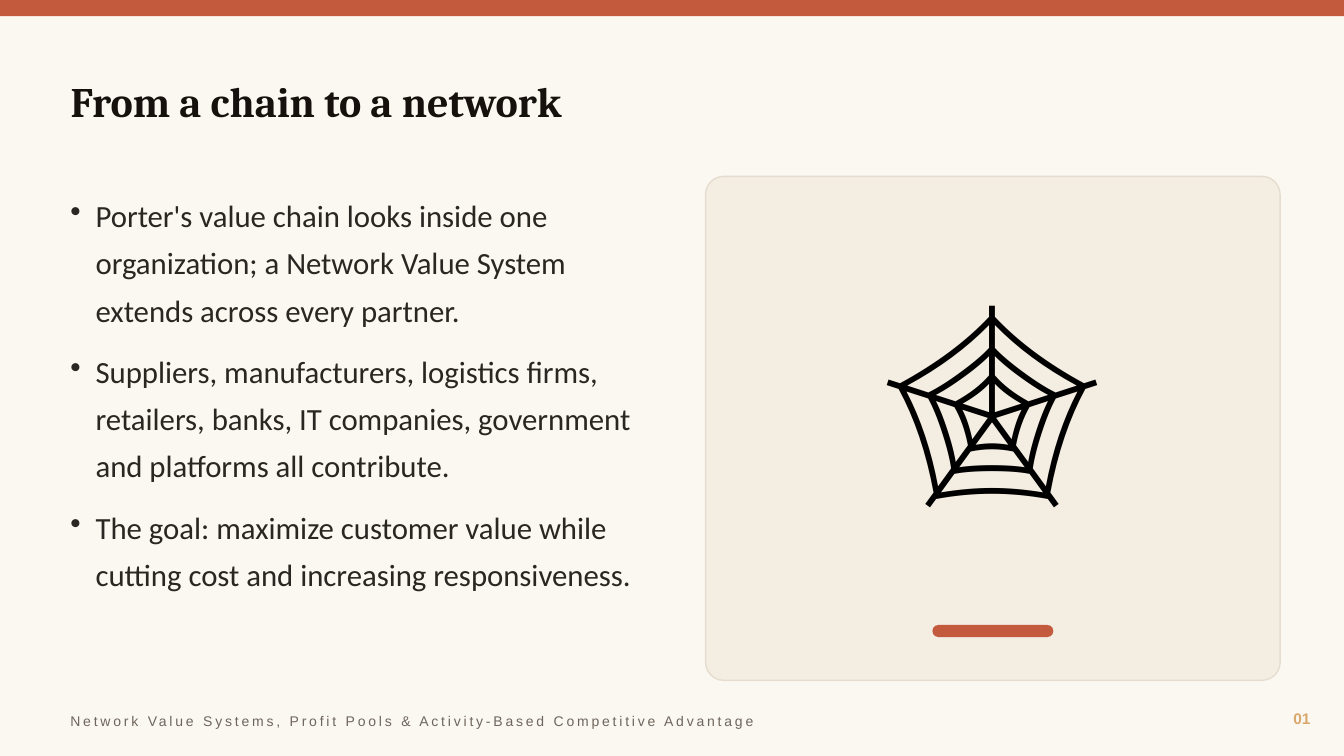
"""Build the slide on moving from a value chain to a value network."""
from dataclasses import dataclass

from lxml import etree
from pptx import Presentation
from pptx import util as u
from pptx.dml.color import RGBColor
from pptx.enum import shapes, text
from pptx.oxml import ns

COLORS = {
    "paper": "FBF7F1", "accent": "C45A3D", "panel": "F4EDE2", "edge": "E4DDD0",
    "title": "16110D", "body": "2A2622", "icon": "000000",
    "number": "D9A86C", "footer": "6E665C",
}
CELL = u.Inches(0.1)
WIDTH, HEIGHT = u.Inches(13.333), u.Inches(7.5)
COLUMNS = WIDTH / CELL


@dataclass(frozen=True)
class Area:
    col: float
    row: float
    cols: float
    rows: float

    def box(self) -> tuple[int, ...]:
        return tuple(round(n * CELL) for n in (self.col, self.row, self.cols, self.rows))


@dataclass(frozen=True)
class Block:
    area: Area
    fill: str
    radius: float | None = None
    line: str | None = None


@dataclass(frozen=True)
class Label:
    area: Area
    lines: tuple[str, ...]
    size: float
    font: str
    color: str
    bold: bool = False
    align: text.PP_ALIGN = text.PP_ALIGN.LEFT
    anchor: text.MSO_ANCHOR = text.MSO_ANCHOR.MIDDLE
    tracking: float = 0
    bullets: bool = False


PANEL = Area(70, 17.5, 57, 50)
BLOCKS = (
    Block(Area(0, 0, COLUMNS, 1.6), "accent"),
    Block(PANEL, "panel", 0.036, "edge"),
    Block(Area(PANEL.col + (PANEL.cols - 12) / 2, 62, 12, 1.2), "accent", 0.5),
)
TITLE = Label(Area(6, 5, 121, 10), ("From a chain to a network",), 30, "Cambria", "title", bold=True)
LABELS = (
    Label(Area(PANEL.col, PANEL.row, PANEL.cols, 41), ("🕸️",), 150, "Calibri", "icon",
          align=text.PP_ALIGN.CENTER),
    Label(Area(6, 18, 60, 50), (
        "Porter's value chain looks inside one organization; a Network Value System "
        "extends across every partner.",
        "Suppliers, manufacturers, logistics firms, retailers, banks, IT companies, "
        "government and platforms all contribute.",
        "The goal: maximize customer value while cutting cost and increasing responsiveness.",
    ), 22, "Calibri", "body", anchor=text.MSO_ANCHOR.TOP, bullets=True),
    Label(Area(122, 69.5, 9, 3.5), ("01",), 11, "Arial", "number", bold=True,
          align=text.PP_ALIGN.RIGHT),
    Label(Area(6, 70, 80, 3),
          ("Network Value Systems, Profit Pools & Activity-Based Competitive Advantage",),
          10, "Arial", "footer", tracking=2),
)


def rgb(name: str) -> RGBColor:
    return RGBColor.from_string(COLORS[name])


def draw_block(s, block: Block) -> None:
    kind = shapes.MSO_SHAPE.RECTANGLE if block.radius is None else shapes.MSO_SHAPE.ROUNDED_RECTANGLE
    sp = s.shapes.add_shape(kind, *block.area.box())
    sp.shadow.inherit = False
    sp.fill.solid()
    sp.fill.fore_color.rgb = rgb(block.fill)
    if block.radius is not None:
        sp.adjustments[0] = block.radius
    if block.line:
        sp.line.color.rgb = rgb(block.line)
        sp.line.width = u.Pt(1)
    else:
        sp.line.fill.background()


def add_bullet(p) -> None:
    indent = u.Inches(0.25)
    props = p._p.get_or_add_pPr()
    props.set("marL", str(indent))
    props.set("indent", str(-indent))
    etree.SubElement(props, ns.qn("a:buChar"), char="•")
    p.line_spacing = 1.28
    p.space_after = u.Pt(10)


def write_label(sp, label: Label) -> None:
    sp.left, sp.top, sp.width, sp.height = label.area.box()
    tf = sp.text_frame
    tf.text = "\n".join(label.lines)
    tf.word_wrap = True
    tf.auto_size = text.MSO_AUTO_SIZE.NONE
    tf.vertical_anchor = label.anchor
    for p in tf.paragraphs:
        p.alignment = label.align
        if label.bullets:
            add_bullet(p)
        for r in p.runs:
            r.font.size = u.Pt(label.size)
            r.font.name = label.font
            r.font.bold = label.bold
            r.font.color.rgb = rgb(label.color)
            if label.tracking:
                r._r.get_or_add_rPr().set("spc", str(round(label.tracking * 100)))


def main() -> None:
    prs = Presentation()
    prs.slide_width, prs.slide_height = WIDTH, HEIGHT
    s = prs.slides.add_slide(prs.slide_layouts[5])
    s.background.fill.solid()
    s.background.fill.fore_color.rgb = rgb("paper")
    write_label(s.shapes.title, TITLE)
    for block in BLOCKS:
        draw_block(s, block)
    for label in LABELS:
        write_label(s.shapes.add_textbox(*label.area.box()), label)
    prs.save("out.pptx")


if __name__ == "__main__":
    main()
